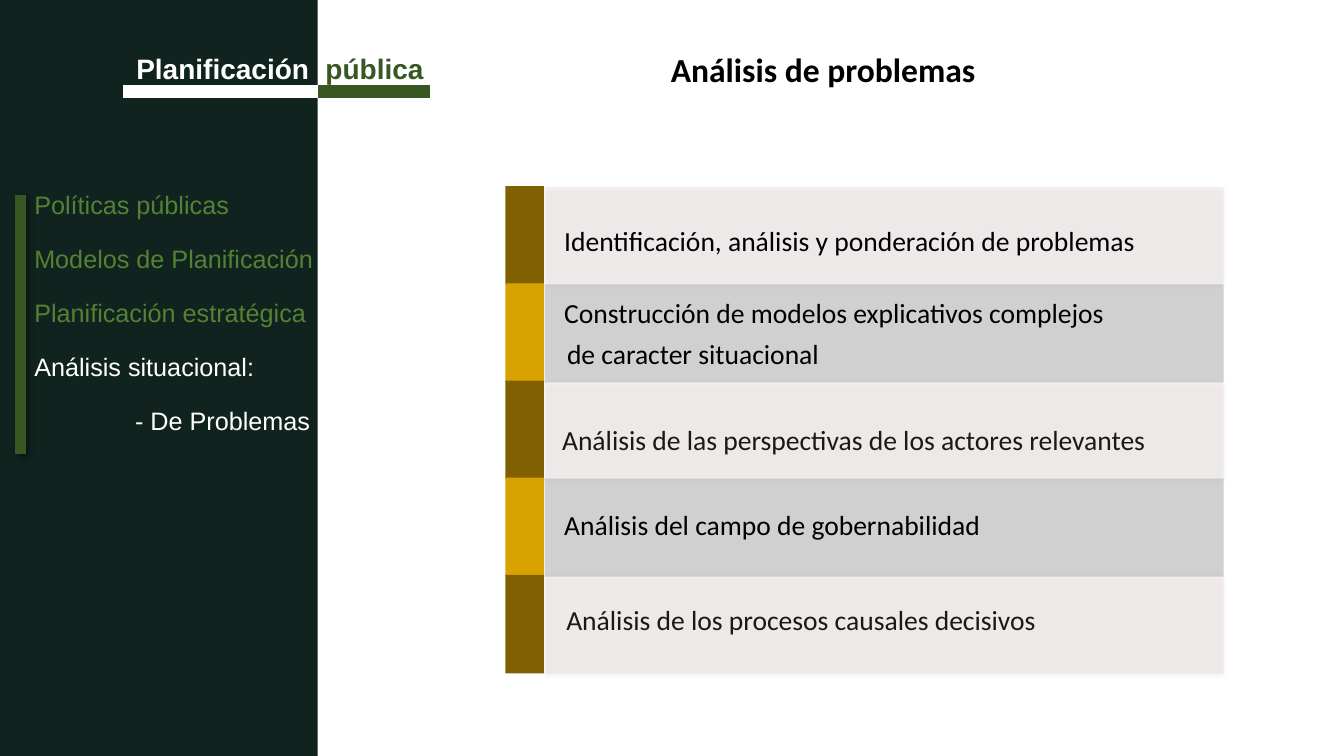
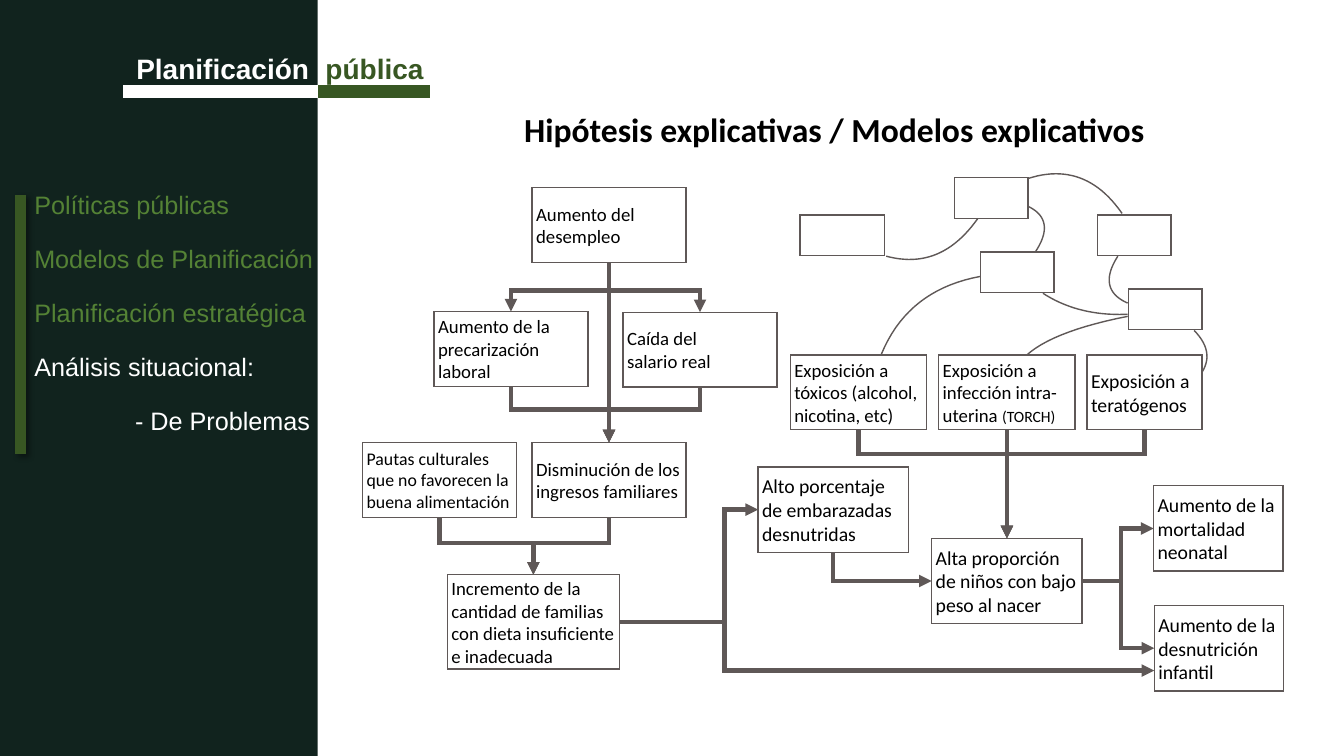
from lxml import etree
from pptx import Presentation
from pptx.dml.color import RGBColor
from pptx.enum.shapes import MSO_CONNECTOR, MSO_SHAPE
from pptx.enum.text import MSO_ANCHOR, MSO_AUTO_SIZE, PP_ALIGN
from pptx.oxml.ns import qn
from pptx.util import Pt

RECT = MSO_SHAPE.RECTANGLE
STRAIGHT = MSO_CONNECTOR.STRAIGHT
TOP, MIDDLE = MSO_ANCHOR.TOP, MSO_ANCHOR.MIDDLE
LEFT, CENTER, RIGHT = PP_ALIGN.LEFT, PP_ALIGN.CENTER, PP_ALIGN.RIGHT
NO_FIT = MSO_AUTO_SIZE.NONE

COLORS = {
    "panel": "11231E", "green": "385723", "visited": "548235",
    "white": "FFFFFF", "black": "000000", "soft": "1D1818",
    "brown": "806000", "gold": "D8A300", "rose": "D0A9A9",
    "gray": "A5A5A5", "line": "5F5857", "shade": "424242",
}
HEAD, BODY = "Calibri", "Arial"
SIDEBAR = (0, 0, 227, 540)

TOPICS = [
    ("Políticas públicas", "visited", 0),
    ("Modelos de Planificación", "visited", 0),
    ("Planificación estratégica", "visited", 0),
    ("Análisis situacional:", "white", 0),
    ("- De Problemas", "white", 72),
]

ROWS = [
    (["Identificación, análisis y ponderación de problemas"], 11, 3.5),
    (["Construcción de modelos explicativos complejos", "de caracter situacional"], 11, 0.3),
    (["Análisis de las perspectivas de los actores relevantes"], 9.5, 7),
    (["Análisis del campo de gobernabilidad"], 11, -1.8),
    (["Análisis de los procesos causales decisivos"], 12.5, -3.3),
]

CAUSES = {
    "desempleo": (130, 14, 110, 53.5, "Aumento del desempleo", 13.4),
    "precarización": (60, 102.5, 110, 53.5, "Aumento de la precarización laboral", 13.4),
    "salario": (195, 103, 110, 53.5, "Caída del\nsalario real", 13.4),
    "pautas": (9, 196, 110, 53.5, "Pautas culturales que no favorecen la buena alimentación", 12.7),
    "ingresos": (130, 196, 110, 53.5, "Disminución de los ingresos familiares", 13.4),
    "dieta": (69.5, 290.5, 123, 67.5, "Incremento de la cantidad de familias con dieta insuficiente e inadecuada", 13.4),
    "embarazadas": (291.5, 213.5, 107.5, 61, "Alto porcentaje de embarazadas desnutridas", 14.1),
    "peso": (415.5, 264.5, 107.5, 61, "Alta proporción de niños con bajo peso al nacer", 14.1),
    "mortalidad": (574, 227, 92.5, 61, "Aumento de la mortalidad neonatal", 14.1),
    "desnutrición": (574.5, 312.5, 92.5, 61, "Aumento de la desnutrición infantil", 14.1),
    "tóxicos": (314.5, 133.5, 97.5, 53.5, "Exposición a tóxicos (alcohol, nicotina, etc)", 13.4),
    "infección": (420.5, 133.5, 97.5, 53.5, "Exposición a infección intra-uterina ", 13.4, "(TORCH)"),
    "teratógenos": (526.5, 133.5, 82, 53.5, "Exposición a teratógenos", 14.1),
}

DOWN = [
    ("desempleo", "precarización", 87.5), ("desempleo", "salario", 87.5),
    ("desempleo", "ingresos", 87.5), ("precarización", "ingresos", 172.5),
    ("salario", "ingresos", 172.5), ("pautas", "dieta", 268),
    ("ingresos", "dieta", 268), ("tóxicos", "peso", 204.5),
    ("infección", "peso", 204.5), ("teratógenos", "peso", 204.5),
]

ACROSS = [
    ("peso", "mortalidad", 550.5, 0), ("peso", "desnutrición", 550.5, 0),
    ("dieta", "embarazadas", 267.5, 0), ("dieta", "desnutrición", 267.5, 16),
]

NODES = [(432, 7, 52.5), (534, 33.5, 52.5), (321.5, 33.5, 60.5),
         (450.5, 60, 52.5), (556, 86.5, 52.5)]

CURVES = [
    ((603, 116), (620, 133.5), (613.5, 150), (582.5, 167.5)),
    ((555.5, 96.5), (540.5, 90), (538.5, 78.5), (548.5, 63)),
    ((555.5, 104.5), (532, 105.5), (512, 100.5), (495, 89.5)),
    ((370.5, 167.5), (378, 115.5), (404.5, 86), (450, 77.5)),
    ((448.5, 36), (430.5, 61.5), (409, 70), (383, 63)),
    ((484.5, 7.5), (511, -1), (533.5, 6.5), (551.5, 32.5)),
    ((484.5, 27.5), (498, 34), (499.5, 45), (489.5, 60)),
    ((555.5, 106), (489.5, 119), (463, 140), (476.5, 167.5)),
]


def rgb(name):
    return RGBColor.from_string(COLORS[name])


def place(sp, box):
    sp.left, sp.top, sp.width, sp.height = (Pt(v) for v in box)


def frame(sp, anchor=MIDDLE, inset=0, wrap=True):
    tf = sp.text_frame
    tf.word_wrap = wrap
    tf.auto_size = NO_FIT
    tf.vertical_anchor = anchor
    tf.margin_left = tf.margin_right = tf.margin_top = tf.margin_bottom = Pt(inset)
    return tf


def write(tf, text, size=18, color="black", font=HEAD, bold=False, align=LEFT,
          before=0, after=0, indent=0, small=""):
    p = tf.add_paragraph() if tf.text else tf.paragraphs[0]
    p.alignment = align
    p.space_before, p.space_after = Pt(before), Pt(after)
    pPr = p._p.get_or_add_pPr()
    pPr.set("marL", str(Pt(indent)))
    pPr.set("indent", "0")
    etree.SubElement(pPr, qn("a:buNone"))
    pieces = [(line, size) for line in text.split("\n")]
    if small:
        pieces.append((small, 11.2))
    for i, (piece, points) in enumerate(pieces):
        if 0 < i <= text.count("\n"):
            p.add_line_break()
        r = p.add_run()
        r.text = piece
        r.font.size, r.font.name, r.font.bold = Pt(points), font, bold
        r.font.color.rgb = rgb(color)


def label(s, box, text, anchor=MIDDLE, **fmt):
    sp = s.shapes.add_textbox(*(Pt(v) for v in box))
    write(frame(sp, anchor, wrap=False), text, **fmt)
    return sp


def stroke(line, color, width):
    line.color.rgb = rgb(color)
    line.width = Pt(width)
    ln = line._get_or_add_ln()
    etree.SubElement(ln, qn("a:miter"), lim="800000")
    return ln


def rect(s, box, fill, line=None, alpha=None):
    sp = s.shapes.add_shape(RECT, *(Pt(v) for v in box))
    sp.shadow.inherit = False
    sp.fill.solid()
    sp.fill.fore_color.rgb = rgb(fill)
    if alpha:
        clr = sp.element.spPr.find(qn("a:solidFill"))[0]
        etree.SubElement(clr, qn("a:alpha"), val=str(alpha * 1000))
    if line:
        stroke(sp.line, line, 1)
    else:
        sp.line.fill.background()
    return sp


def shadow(sp, color, blur, dist, angle):
    effects = sp.element.spPr.find(qn("a:effectLst"))
    outer = etree.SubElement(effects, qn("a:outerShdw"), blurRad=str(Pt(blur)),
                             dist=str(Pt(dist)), dir=str(angle * 60000))
    clr = etree.SubElement(outer, qn("a:srgbClr"), val=COLORS[color])
    etree.SubElement(clr, qn("a:alpha"), val="40000")


def polyline(s, points, width):
    start, *rest = [(Pt(px), Pt(py)) for px, py in points]
    fb = s.shapes.build_freeform(*start)
    fb.add_line_segments(rest, close=False)
    sp = fb.convert_to_shape()
    sp.shadow.inherit = False
    sp.fill.background()
    return stroke(sp.line, "line", width)


def arrow(s, points):
    a, b = points[0], points[-1]
    if a[0] == b[0]:
        c = s.shapes.add_connector(STRAIGHT, *(Pt(v) for v in a + b))
        ln = stroke(c.line, "line", 3)
        etree.SubElement(c.element.spPr, qn("a:effectLst"))
    else:
        ln = polyline(s, points, 3)
    etree.SubElement(ln, qn("a:tailEnd"), type="triangle")


def curve(s, points, steps=24):
    def at(t):
        u = 1 - t
        weights = (u ** 3, 3 * u * u * t, 3 * u * t * t, t ** 3)
        return tuple(sum(w * q[i] for w, q in zip(weights, points)) for i in (0, 1))

    polyline(s, [at(i / steps) for i in range(steps + 1)], 1)


def sidebar(s, box):
    x, y, w, h = box
    edge = x + w
    rect(s, box, "panel")
    marker = rect(s, (x + 11, y + 139.5, 7, 184), "green", "green")
    shadow(marker, "black", 4, 3, 45)
    rect(s, (edge - 138.5, y + 61, 138.5, 8.5), "white", "white")
    rect(s, (edge + 0.5, y + 61, 79.5, 8.5), "green", "green")
    brand = dict(size=20, font=BODY, bold=True)
    label(s, (edge - 138.5, y + 37, 132.5, 24), "Planificación", color="white", align=RIGHT, **brand)
    label(s, (edge + 5.5, y + 37, 75, 24), "pública", color="green", **brand)
    body = s.placeholders[1]
    place(body, (x + 24.5, y + 135, w + 5, 190))
    tf = frame(body, TOP)
    for text, color, indent in TOPICS:
        write(tf, text, color=color, font=BODY, after=17, indent=indent)
    body.element.getparent().append(body.element)


def new_slide(prs, title, box):
    s = prs.slides.add_slide(prs.slide_layouts[1])
    place(s.shapes.title, box)
    write(frame(s.shapes.title), title, size=24, bold=True, align=CENTER)
    sidebar(s, SIDEBAR)
    return s


def striped_rows(s, box):
    x, y, w, h = box
    pitch = h / len(ROWS)
    for i, (lines, dx, dy) in enumerate(ROWS):
        top, odd = y + i * pitch, i % 2
        band = (x + 28, top + 0.7, w - 28, pitch + 0.6)
        if odd:
            rect(s, band, "gray", alpha=52)
        else:
            shadow(rect(s, band, "rose", alpha=14), "shade", 3, 1, 90)
        rect(s, (x, top, 27.5, pitch + 1), "gold" if odd else "brown")
        color = "soft" if i in (2, 4) else "black"
        text_box = (x + 31 + dx, top + dy, w - 60, pitch + 1)
        sp = label(s, text_box, lines[0], size=19.7, color=color)
        for line in lines[1:]:
            write(sp.text_frame, line, size=19.7, color=color, before=5.5, indent=2)


def cause_map(s, box):
    x, y = box[:2]
    for nx, ny, nw in NODES:
        rect(s, (x + nx, y + ny, nw, 29), "white", "line")
    for points in CURVES:
        curve(s, [(x + px, y + py) for px, py in points])
    cards = {}
    for name, (cx, cy, w, h, text, size, *small) in CAUSES.items():
        cards[name] = (x + cx, y + cy, w, h)
        sp = rect(s, cards[name], "white", "line")
        write(frame(sp, inset=2.9), text, size=size, small="".join(small))

    def side(name, fx, fy):
        left, top, w, h = cards[name]
        return left + w * fx, top + h * fy

    for start, end, bend in DOWN:
        a, b = side(start, 0.5, 1), side(end, 0.5, 0)
        arrow(s, [a, (a[0], y + bend), (b[0], y + bend), b])
    for start, end, bend, drop in ACROSS:
        a, (bx, by) = side(start, 1, 0.5), side(end, 0, 0.5)
        arrow(s, [a, (x + bend, a[1]), (x + bend, by + drop), (bx, by + drop)])
    a, b = side("embarazadas", 0.5, 1), side("peso", 0, 0.5)
    arrow(s, [a, (a[0], b[1]), b])


def main():
    prs = Presentation()
    prs.slide_width, prs.slide_height = Pt(960), Pt(540)
    s = new_slide(prs, "Análisis de problemas", (348, 31.5, 480, 36))
    striped_rows(s, (361, 133, 513, 347))
    s = new_slide(prs, "Hipótesis explicativas / Modelos explicativos", (356, 74, 480, 36))
    cause_map(s, (250, 120, 670, 376))
    prs.save("out.pptx")


if __name__ == "__main__":
    main()
